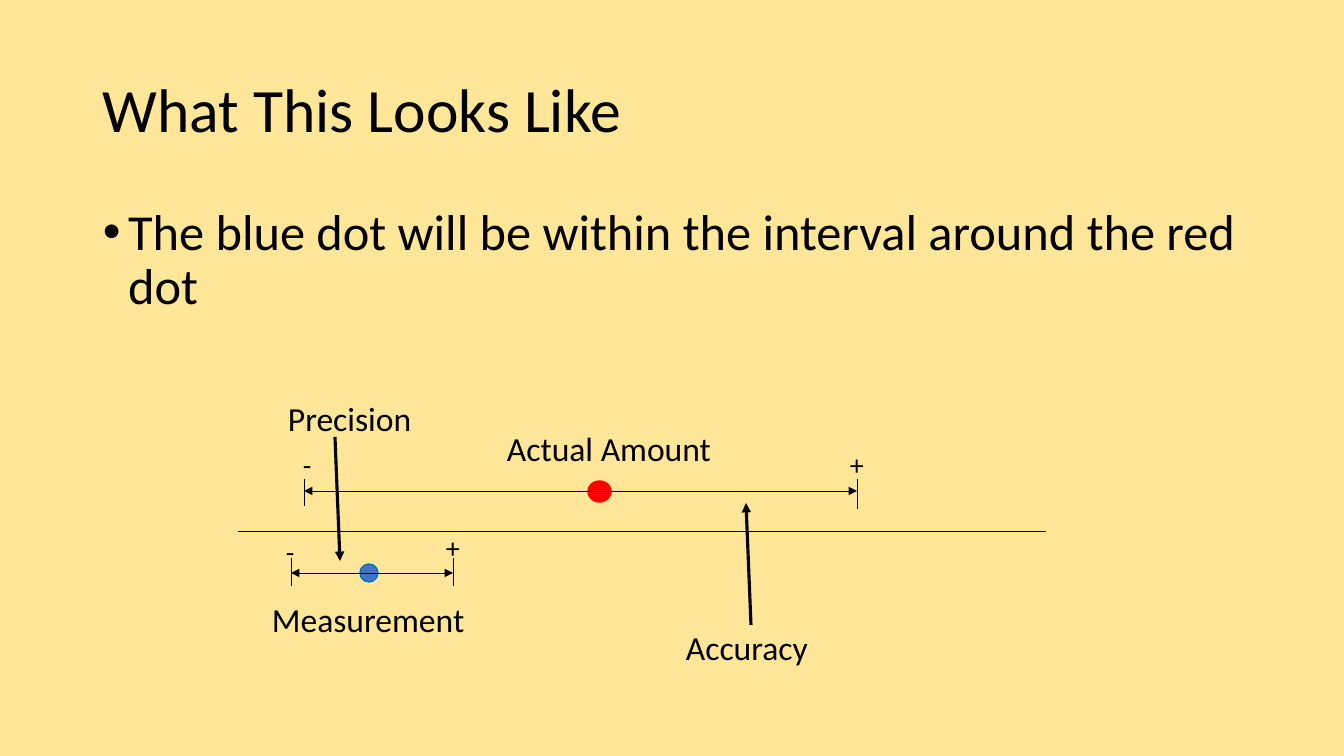
import pptx
import pptx.util
import pptx.dml.color
import pptx.enum.shapes
import pptx.enum.text
import pptx.oxml.ns
import lxml.etree

COLORS = {"background": "FFE699", "ink": "000000", "red": "FF0000",
          "blue": "4472C4", "blue_edge": "0070C0"}
FONT = "Calibri"
SLIDE_SIZE = (1344, 756)
SCALE = 12192000 / 1344

TITLE = ("What This Looks Like", (93, 40, 1159, 146), 44)
BULLET = ("The blue dot will be within the interval around the red dot",
          (93, 202, 1159, 480), 36)
LABELS = [
    ("Measurement", (262, 591, 214, 101), 24),
    ("Accuracy", (676, 619, 154, 55), 24),
    ("Actual Amount", (497, 420, 311, 55), 24),
    ("Precision", (278, 390, 154, 55), 24),
    ("+", (436, 523, 36, 49), 20),
    ("-", (276, 527, 36, 49), 20),
    ("+", (840, 440, 76, 49), 20),
    ("-", (293, 440, 36, 49), 20),
]
DOTS = [
    ((360, 564, 18, 18), "blue", "blue_edge"),
    ((588, 481, 23, 21), "red", "red"),
]
INTERVALS = [
    {"left": 291, "right": 453, "y": 573, "top": 558, "bottoms": (586, 586)},
    {"left": 304, "right": 857, "y": 491, "top": 479, "bottoms": (506, 509)},
]
DIVIDER = (238, 531, 1046, 531)
POINTERS = [(751, 625, 746, 503), (335, 437, 340, 561)]


def emu(pixels):
    return pptx.util.Emu(round(pixels * SCALE))


def color(name):
    return pptx.dml.color.RGBColor.from_string(COLORS[name])


def add_text(page, text, frame, size, wrap=True):
    box = page.shapes.add_textbox(*map(emu, frame))
    box.text_frame.word_wrap = wrap
    para = box.text_frame.paragraphs[0]
    para.text = text
    para.font.name = FONT
    para.font.size = pptx.util.Pt(size)
    para.font.color.rgb = color("ink")
    para.line_spacing = 0.9
    return box


def add_label(page, text, frame, size):
    box = add_text(page, text, frame, size, wrap=text != "Measurement")
    para = box.text_frame.paragraphs[0]
    para.line_spacing = 1.07
    para.space_after = pptx.util.Pt(8)


def add_bullet(box):
    para = box.text_frame.paragraphs[0]
    para.space_before = pptx.util.Pt(10)
    properties = para._p.get_or_add_pPr()
    properties.set("marL", "228600")
    properties.set("indent", "-228600")
    for tag, key, value in (("a:buFont", "typeface", "Arial"),
                            ("a:buChar", "char", "•")):
        element = lxml.etree.Element(pptx.oxml.ns.qn(tag))
        element.set(key, value)
        properties.insert_element_before(element, "a:tabLst", "a:defRPr", "a:extLst")


def add_line(page, ends, width=0.5, arrows=()):
    line = page.shapes.add_connector(
        pptx.enum.shapes.MSO_CONNECTOR.STRAIGHT, *map(emu, ends))
    line.line.color.rgb = color("ink")
    line.line.width = pptx.util.Pt(width)
    outline = line.line._get_or_add_ln()
    for arrow in arrows:
        end = lxml.etree.SubElement(outline, pptx.oxml.ns.qn(arrow))
        end.set("type", "triangle")
    lxml.etree.SubElement(line._element.spPr, pptx.oxml.ns.qn("a:effectLst"))


def add_dot(page, frame, fill, edge):
    dot = page.shapes.add_shape(pptx.enum.shapes.MSO_SHAPE.OVAL, *map(emu, frame))
    dot.shadow.inherit = False
    dot.fill.solid()
    dot.fill.fore_color.rgb = color(fill)
    dot.line.color.rgb = color(edge)
    dot.line.width = pptx.util.Pt(1)


def add_interval(page, left, right, y, top, bottoms):
    for x, bottom in zip((left, right), bottoms):
        add_line(page, (x, top, x, bottom))
    add_line(page, (left, y, right, y), arrows=("a:headEnd", "a:tailEnd"))


def main():
    deck = pptx.Presentation()
    deck.slide_width, deck.slide_height = map(emu, SLIDE_SIZE)
    page = deck.slides.add_slide(deck.slide_layouts[6])
    page.background.fill.solid()
    page.background.fill.fore_color.rgb = color("background")

    title = add_text(page, *TITLE)
    title.text_frame.vertical_anchor = pptx.enum.text.MSO_ANCHOR.MIDDLE
    add_bullet(add_text(page, *BULLET))
    for label in LABELS:
        add_label(page, *label)
    for dot in DOTS:
        add_dot(page, *dot)
    for interval in INTERVALS:
        add_interval(page, **interval)
    add_line(page, DIVIDER)
    for pointer in POINTERS:
        add_line(page, pointer, width=2.25, arrows=("a:tailEnd",))
    deck.save("out.pptx")


if __name__ == "__main__":
    main()
